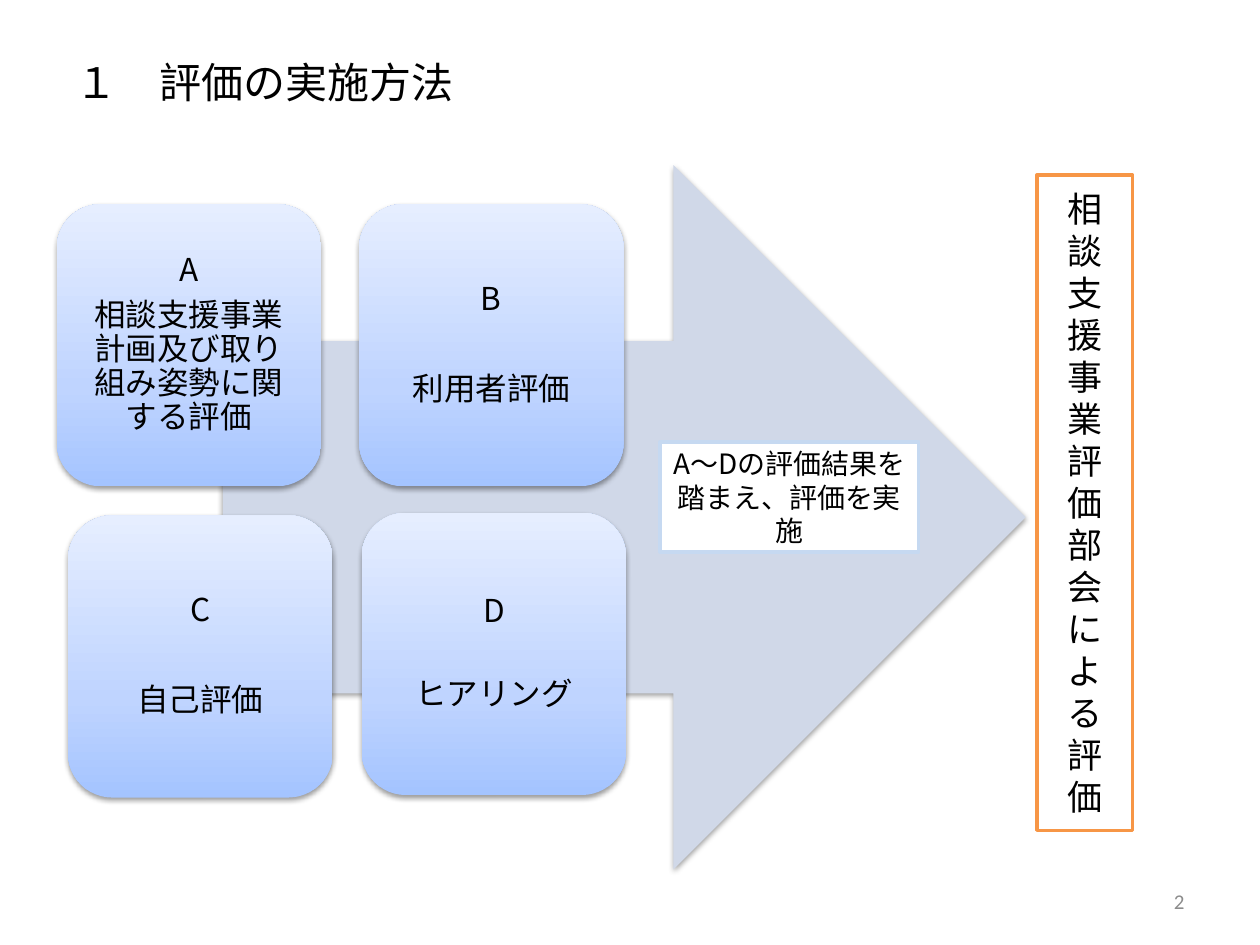
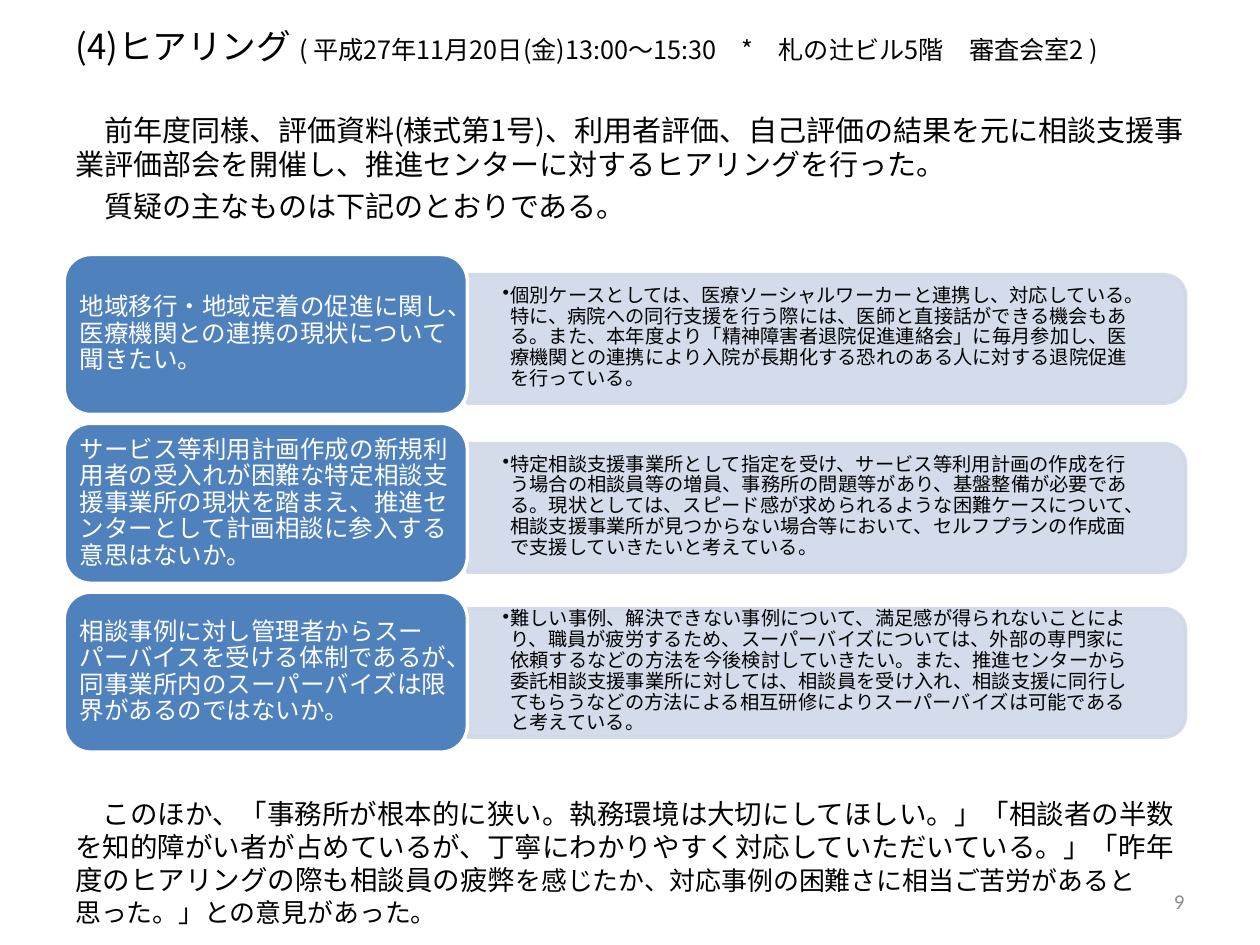
from copy import deepcopy

from lxml.etree import SubElement
from pptx import Presentation
from pptx.dml.color import RGBColor
from pptx.enum.shapes import MSO_SHAPE as SHAPE
from pptx.enum.text import MSO_ANCHOR as ANCHOR, PP_ALIGN as ALIGN
from pptx.oxml.ns import qn
from pptx.util import Inches, Pt

BLACK = RGBColor(0x00, 0x00, 0x00)
WHITE = RGBColor(0xFF, 0xFF, 0xFF)
GREY = RGBColor(0x8C, 0x8C, 0x8C)
PALE_BLUE = RGBColor(0xD0, 0xD8, 0xE8)
BLUE = RGBColor(0x4F, 0x81, 0xBD)
ORANGE = RGBColor(0xF7, 0x96, 0x46)
SKY = RGBColor(0xC6, 0xD9, 0xF1)
CARD_STOPS = [(0, RGBColor(0xA4, 0xC4, 0xFF)), (0.35, RGBColor(0xBF, 0xD4, 0xFF)),
              (1, RGBColor(0xE6, 0xEE, 0xFF))]
FONT = "Noto Sans CJK JP"


def write(shape, *paragraphs, size=18, color=BLACK, font=FONT, align=ALIGN.LEFT,
          anchor=ANCHOR.MIDDLE, spacing=1.0, gap=0, inset=(0.1, 0.05), bullet=False):
    """Each paragraph is a string or a list of (text, size) runs."""
    frame = shape.text_frame
    frame.word_wrap = True
    frame.vertical_anchor = anchor
    frame.margin_left = frame.margin_right = Inches(inset[0])
    frame.margin_top = frame.margin_bottom = Inches(inset[1])
    for i, runs in enumerate(paragraphs):
        para = frame.paragraphs[0] if i == 0 else frame.add_paragraph()
        para.alignment = align
        para.line_spacing = spacing
        para.space_before = Pt(gap if i else 0)
        if bullet:
            props = para._p.get_or_add_pPr()
            props.set("marL", str(Inches(0.06)))
            props.set("indent", str(-Inches(0.06)))
            SubElement(props, qn("a:buChar"), char="•")
        for text, run_size in [(runs, size)] if isinstance(runs, str) else runs:
            run = para.add_run()
            run.text = text
            run.font.size = Pt(run_size)
            run.font.name = font
            run.font.color.rgb = color
            SubElement(run._r.get_or_add_rPr(), qn("a:ea"), typeface=font)


def draw(slide, kind, left, top, width, height, fill=None, line=None, shadow=False):
    shape = slide.shapes.add_shape(kind, Inches(left), Inches(top), Inches(width), Inches(height))
    shape.shadow.inherit = False
    if fill is not None:
        shape.fill.solid()
        shape.fill.fore_color.rgb = fill
    if line is None:
        shape.line.fill.background()
    else:
        shape.line.color.rgb = line
        shape.line.width = Pt(2)
    if shadow:
        effects = shape._element.spPr.find(qn("a:effectLst"))
        outer = SubElement(effects, qn("a:outerShdw"), blurRad=str(Pt(3.1)),
                           dist=str(Pt(1.6)), dir="5400000", rotWithShape="0")
        tint = SubElement(outer, qn("a:srgbClr"), val="000000")
        SubElement(tint, qn("a:alpha"), val="38000")
    return shape


prs = Presentation()
prs.slide_width, prs.slide_height = Inches(10), Inches(7.5)
method, hearing = [prs.slides.add_slide(prs.slide_layouts[6]) for _ in range(2)]

# Page numbers
for slide, number in [(method, "2"), (hearing, "9")]:
    page = slide.shapes.add_textbox(Inches(7.17), Inches(6.95), Inches(2.33), Inches(0.4))
    write(page, number, size=12, color=GREY, font="Calibri", align=ALIGN.RIGHT)

# Slide 1: title and arrow
title = method.shapes.add_textbox(Inches(0.5), Inches(0.3), Inches(9), Inches(0.69))
write(title, "１　評価の実施方法", size=24)
draw(method, SHAPE.RIGHT_ARROW, 1.77, 1.31, 6.37, 5.59, PALE_BLUE, shadow=True)

# Four kinds of evaluation
evaluations = [
    (0.45, 1.62, "A", "相談支援事業計画及び取り組み姿勢に関する評価", 6.3),
    (0.54, 4.09, "C", "自己評価", 32),
    (2.85, 1.62, "B", "利用者評価", 32),
    (2.87, 4.07, "D", "ヒアリング", 28),
]
for left, top, letter, label, gap in evaluations:
    card = draw(method, SHAPE.ROUNDED_RECTANGLE, left, top, 2.1, 2.24, shadow=True)
    card.fill.gradient()
    card.fill.gradient_angle = 90
    stop_list = card._element.spPr.find(".//" + qn("a:gsLst"))
    stop_list.append(deepcopy(stop_list[0]))
    for stop, (position, tone) in zip(card.fill.gradient_stops, CARD_STOPS):
        stop.position = position
        stop.color.rgb = tone
    write(card, letter, label, align=ALIGN.CENTER, spacing=0.9, gap=gap, inset=(0.1, 0.07))

# Committee evaluation, one character a line
committee = draw(method, SHAPE.RECTANGLE, 8.23, 1.39, 0.76, 5.2, WHITE, ORANGE)
write(committee, *"相談支援事業評価部会による評価", size=20, align=ALIGN.CENTER)
basis = draw(method, SHAPE.RECTANGLE, 5.24, 3.51, 2.05, 0.87, WHITE, SKY)
write(basis, "A～Dの評価結果を踏まえ、評価を実施", size=16, align=ALIGN.CENTER)

# Slide 2: title and introduction
title = hearing.shapes.add_textbox(Inches(0.5), Inches(0.15), Inches(9), Inches(0.7))
write(title, [("(4)ヒアリング ", 19.8),
              ("( 平成27年11月20日(金)13:00～15:30　*　札の辻ビル5階　審査会室2 )", 14.4)],
      anchor=ANCHOR.TOP)
intro = hearing.shapes.add_textbox(Inches(0.5), Inches(0.84), Inches(9), Inches(1))
write(intro,
      "　前年度同様、評価資料(様式第1号)、利用者評価、自己評価の結果を元に相談支援事業評価部会を開催し、"
      "推進センターに対するヒアリングを行った。",
      "　質疑の主なものは下記のとおりである。",
      size=16.6, anchor=ANCHOR.TOP, gap=4)

# Questions and answers, each with the middle height of its answer
exchanges = [
    (2.69, "地域移行・地域定着の促進に関し、医療機関との連携の現状について聞きたい。",
     "個別ケースとしては、医療ソーシャルワーカーと連携し、対応している。特に、病院への同行支援を行う際には、"
     "医師と直接話ができる機会もある。また、本年度より「精神障害者退院促進連絡会」に毎月参加し、"
     "医療機関との連携により入院が長期化する恐れのある人に対する退院促進を行っている。"),
    (4.03, "サービス等利用計画作成の新規利用者の受入れが困難な特定相談支援事業所の現状を踏まえ、"
     "推進センターとして計画相談に参入する意思はないか。",
     "特定相談支援事業所として指定を受け、サービス等利用計画の作成を行う場合の相談員等の増員、"
     "事務所の問題等があり、基盤整備が必要である。現状としては、スピード感が求められるような困難ケースについて、"
     "相談支援事業所が見つからない場合等において、セルフプランの作成面で支援していきたいと考えている。"),
    (5.34, "相談事例に対し管理者からスーパーバイスを受ける体制であるが、"
     "同事業所内のスーパーバイズは限界があるのではないか。",
     "難しい事例、解決できない事例について、満足感が得られないことにより、職員が疲労するため、"
     "スーパーバイズについては、外部の専門家に依頼するなどの方法を今後検討していきたい。"
     "また、推進センターから委託相談支援事業所に対しては、相談員を受け入れ、"
     "相談支援に同行してもらうなどの方法による相互研修によりスーパーバイズは可能であると考えている。"),
]
for row, (middle, question, answer) in enumerate(exchanges):
    panel = draw(hearing, SHAPE.ROUND_2_SAME_RECTANGLE, 6.05, middle - 2.85, 1.02, 5.7,
                 PALE_BLUE, PALE_BLUE)
    panel.rotation = 90
    for tint in panel._element.spPr.iter(qn("a:srgbClr")):
        SubElement(tint, qn("a:alpha"), val="90000")
    reply = hearing.shapes.add_textbox(Inches(3.71), Inches(middle - 0.47),
                                       Inches(5.65), Inches(0.92))
    write(reply, answer, size=11, spacing=0.9, inset=(0.28, 0.14), bullet=True)
    asked = draw(hearing, SHAPE.ROUNDED_RECTANGLE, 0.51, 2.02 + 1.34 * row, 3.2, 1.27, BLUE, WHITE)
    write(asked, question, size=14, color=WHITE, spacing=0.9, inset=(0.06, 0.03))

# Closing remarks
closing = hearing.shapes.add_textbox(Inches(0.5), Inches(6.28), Inches(9), Inches(1.15))
write(closing, [
    ("　このほか、「事務所が根本的に狭い。執務環境は大切にしてほしい。」「相談者の半数を知的障がい者が占めているが、"
     "丁寧にわかりやすく対応していただいている。」「昨年度のヒアリングの際も相談員の疲弊", 15.7),
    ("を感じたか、対応事例の困難さに相当ご苦労があると思った。」との意見があった。", 14.8),
], anchor=ANCHOR.TOP)

prs.save("out.pptx")
